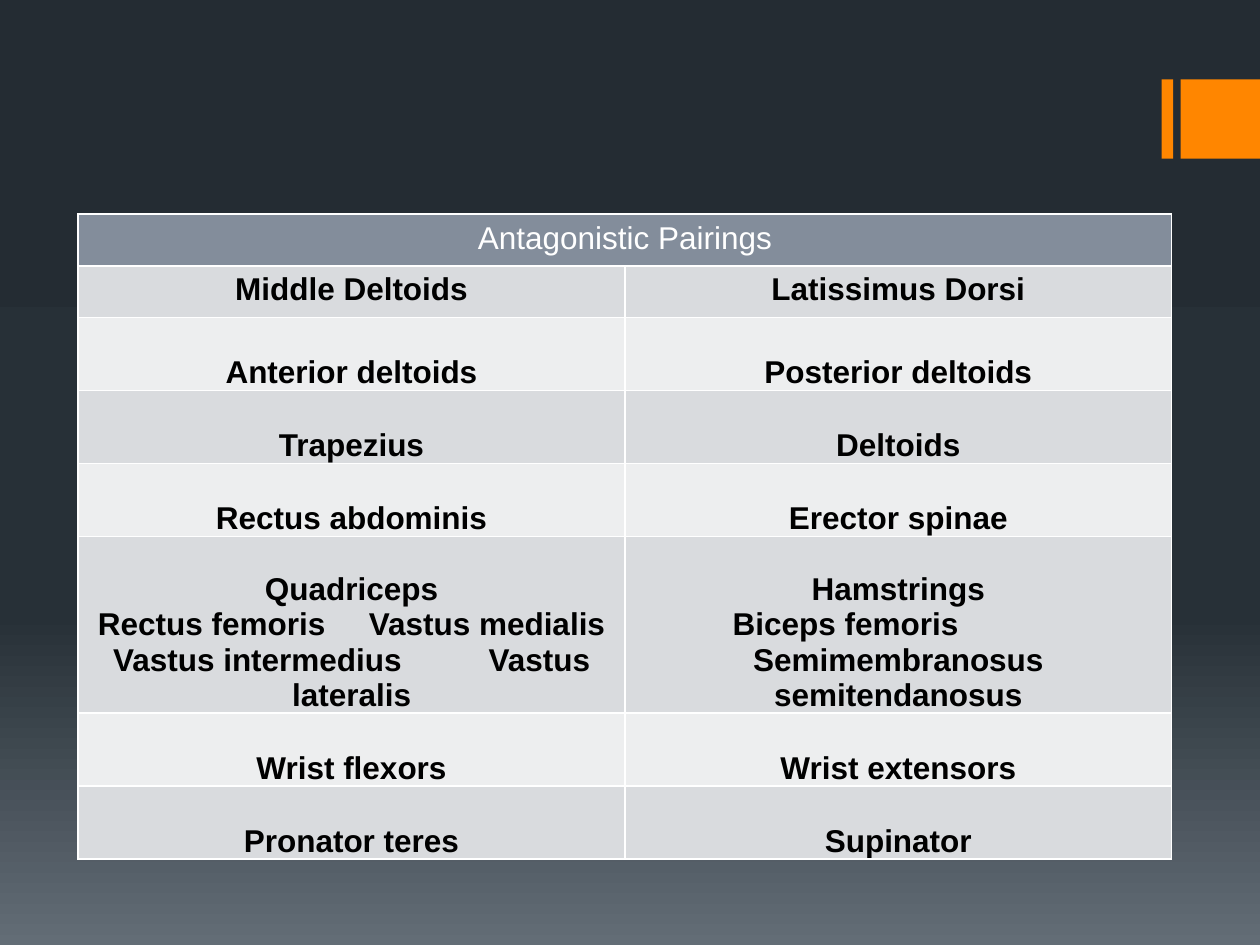
import pptx
import pptx.util
import pptx.oxml
import pptx.oxml.ns
import pptx.dml.color
import pptx.enum.text
import pptx.enum.shapes
import lxml.etree

Inches = pptx.util.Inches
NS = pptx.oxml.ns.nsdecls("a")


def paint(fill, hue):
    fill.solid()
    fill.fore_color.rgb = pptx.dml.color.RGBColor.from_string(hue)


deck = pptx.Presentation()
deck.slide_width = Inches(10)
deck.slide_height = Inches(7.5)
slide = deck.slides.add_slide(deck.slide_layouts[6])

back = slide.background.fill
back.gradient()
back.gradient_angle = 270
stops = back._fill._gradFill.find(pptx.oxml.ns.qn("a:gsLst"))
for stop in list(stops):
    stops.remove(stop)
for pos, hue in [(0, "242C33"), (65, "273037"), (100, "636D76")]:
    stops.append(pptx.oxml.parse_xml(
        f'<a:gs {NS} pos="{pos * 1000}"><a:srgbClr val="{hue}"/></a:gs>'))

for left, width in [(9.22, 0.09), (9.37, 0.63)]:
    bar = slide.shapes.add_shape(
        pptx.enum.shapes.MSO_SHAPE.RECTANGLE,
        Inches(left), Inches(0.63), Inches(width), Inches(0.63))
    bar.shadow.inherit = False
    paint(bar.fill, "FF8600")
    bar.line.fill.background()

pairs = [
    ("Antagonistic Pairings", ""),
    ("Middle Deltoids", "Latissimus Dorsi"),
    ("Anterior deltoids", "Posterior deltoids"),
    ("Trapezius", "Deltoids"),
    ("Rectus abdominis", "Erector spinae"),
    ("Quadriceps\nRectus femoris\tVastus medialis\nVastus intermedius\tVastus lateralis",
     "Hamstrings\nBiceps femoris\t\nSemimembranosus semitendanosus"),
    ("Wrist flexors", "Wrist extensors"),
    ("Pronator teres", "Supinator"),
]
tabs = {"Rectus femoris": 2.15, "Vastus intermedius": 2.98, "Biceps femoris": 2.63}
highs = [0.41, 0.41, 0.58, 0.58, 0.58, 1.4, 0.58, 0.58]

table = slide.shapes.add_table(
    len(pairs), 2, Inches(0.62), Inches(1.7), Inches(8.68), Inches(sum(highs))).table
for col in table.columns:
    col.width = Inches(4.34)
table.cell(0, 0).merge(table.cell(0, 1))

for row, (pair, high) in enumerate(zip(pairs, highs)):
    table.rows[row].height = Inches(high)
    head = row == 0
    tight = row > 1
    for col, text in enumerate(pair):
        cell = table.cell(row, col)
        cell.margin_left = cell.margin_right = Inches(0.07 if tight else 0.1)
        cell.margin_top = cell.margin_bottom = Inches(0 if tight else 0.05)
        anchor = pptx.enum.text.MSO_ANCHOR
        cell.vertical_anchor = anchor.BOTTOM if tight else anchor.TOP
        props = cell._tc.get_or_add_tcPr()
        for side in ["lnL", "lnR", "lnT", "lnB"]:
            props.append(pptx.oxml.parse_xml(
                f'<a:{side} {NS} w="12700"><a:solidFill>'
                f'<a:srgbClr val="FFFFFF"/></a:solidFill></a:{side}>'))
        paint(cell.fill, "838D9B" if head else ["EDEEEF", "D9DBDE"][row % 2])
        cell.text_frame.text = text
        for para in cell.text_frame.paragraphs:
            para.alignment = pptx.enum.text.PP_ALIGN.CENTER
            name = para.text.split("\t")[0]
            if name in tabs:
                para._p.get_or_add_pPr().append(pptx.oxml.parse_xml(
                    f'<a:tabLst {NS}><a:tab pos="{Inches(tabs[name])}" algn="l"/></a:tabLst>'))
            for run in para.runs:
                run.font.name = "Arial"
                run.font.size = pptx.util.Pt(18)
                run.font.bold = not head
                paint(run.font.fill, "FFFFFF" if head else "000000")

deck.save("out.pptx")
